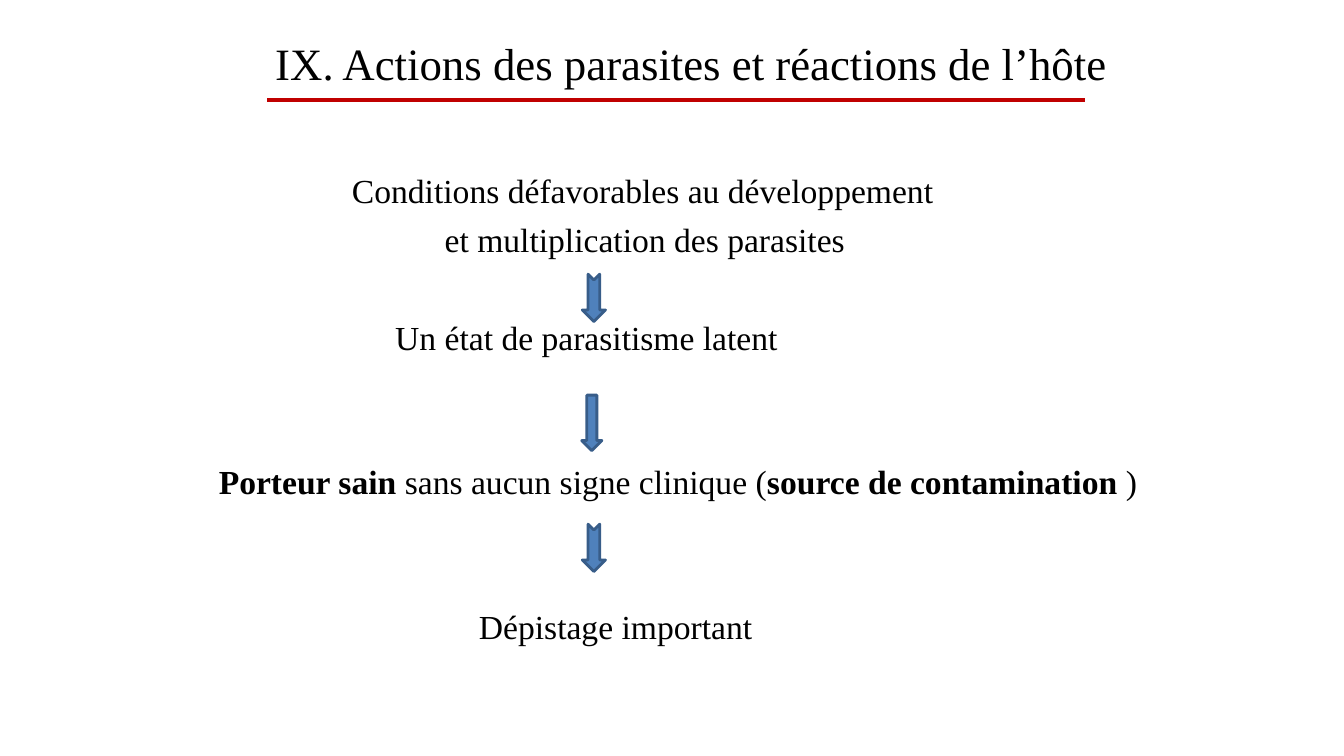
from lxml.etree import SubElement
from pptx import Presentation
from pptx.dml.color import RGBColor
from pptx.enum.shapes import MSO_CONNECTOR, MSO_SHAPE
from pptx.enum.text import MSO_ANCHOR, PP_ALIGN
from pptx.oxml.ns import qn
from pptx.util import Inches, Pt

COLORS = {"text": "000000", "rule": "C00000", "arrow": "4F81BC", "arrow_edge": "385D89"}
FONT = "Times New Roman"


def color(name):
    return RGBColor.from_string(COLORS[name])


def set_margins(frame, top):
    frame.margin_left = frame.margin_right = frame.margin_bottom = 0
    frame.margin_top = Inches(top)
    frame.word_wrap = True


def add_run(paragraph, text, size, bold=False):
    run = paragraph.add_run()
    run.text = text
    run.font.name = FONT
    run.font.size = Pt(size)
    run.font.bold = bold
    run.font.color.rgb = color("text")


def add_heading(slide, left, top, width, height):
    """Fill the title and underline it with the red rule."""
    title = slide.shapes.title
    title.left, title.top = Inches(left), Inches(top)
    title.width, title.height = Inches(width), Inches(height)
    frame = title.text_frame
    set_margins(frame, 0.26)
    frame.vertical_anchor = MSO_ANCHOR.MIDDLE
    heading = frame.paragraphs[0]
    heading.alignment = PP_ALIGN.LEFT
    add_run(heading, "IX. Actions des parasites et réactions de l’hôte", 32)

    rule_left, rule_top = left - 0.08, top + 0.9
    rule = slide.shapes.add_connector(
        MSO_CONNECTOR.STRAIGHT, Inches(rule_left), Inches(rule_top),
        Inches(rule_left + 8.11), Inches(rule_top))
    rule.line.color.rgb = color("rule")
    rule.line.width = Pt(3)
    SubElement(rule._element.spPr, qn("a:effectLst"))


def add_step(slide, left, top, width, height, runs, hanging=0, spacing=1.0):
    """Place one step; each run is (text, bold), hanging indents its later lines."""
    box = slide.shapes.add_textbox(Inches(left), Inches(top), Inches(width), Inches(height))
    set_margins(box.text_frame, 0.02)
    step = box.text_frame.paragraphs[0]
    step.line_spacing = spacing
    if hanging:
        properties = step._p.get_or_add_pPr()
        properties.set("marL", str(Inches(hanging)))
        properties.set("indent", str(-Inches(hanging)))
    for text, bold in runs:
        add_run(step, text, 24, bold)


def add_down_arrow(slide, center, top, width, height, notched=False):
    if notched:  # the notched preset points right, so it is turned about its centre
        left, upper = center - height / 2, top + (height - width) / 2
        arrow = slide.shapes.add_shape(MSO_SHAPE.NOTCHED_RIGHT_ARROW, Inches(left),
                                       Inches(upper), Inches(height), Inches(width))
        arrow.rotation = 90
    else:
        arrow = slide.shapes.add_shape(MSO_SHAPE.DOWN_ARROW, Inches(center - width / 2),
                                       Inches(top), Inches(width), Inches(height))
    arrow.shadow.inherit = False
    arrow.fill.solid()
    arrow.fill.fore_color.rgb = color("arrow")
    arrow.line.color.rgb = color("arrow_edge")
    arrow.line.width = Pt(2)


def add_flow(slide, left, top):
    """Place the four steps and the arrows that lead from each to the next."""
    add_step(slide, left + 1.34, top, 5.85, 1.0,
             [("Conditions défavorables au développement et multiplication des parasites", False)],
             hanging=0.92, spacing=1.2)
    add_step(slide, left + 1.77, top + 1.53, 4.2, 0.43,
             [("Un état de parasitisme latent", False)])
    add_step(slide, left + 0.02, top + 2.96, 9.3, 0.43,
             [("Porteur sain ", True), ("sans aucun signe clinique (", False),
              ("source de contamination ", True), (")", False)])
    add_step(slide, left + 2.6, top + 4.4, 2.9, 0.43, [("Dépistage important", False)])

    center = left + 3.74
    for arrow_top in (1.13, 3.61):
        add_down_arrow(slide, center, top + arrow_top, 0.23, 0.47, notched=True)
    add_down_arrow(slide, center - 0.02, top + 2.33, 0.2, 0.55)


def main():
    deck = Presentation()
    deck.slide_width, deck.slide_height = Inches(13.33), Inches(7.5)
    slide = deck.slides.add_slide(deck.slide_layouts[5])
    add_heading(slide, 2.73, 0.09, 10.2, 0.8)
    add_flow(slide, 2.15, 1.59)
    deck.save("out.pptx")


if __name__ == "__main__":
    main()
